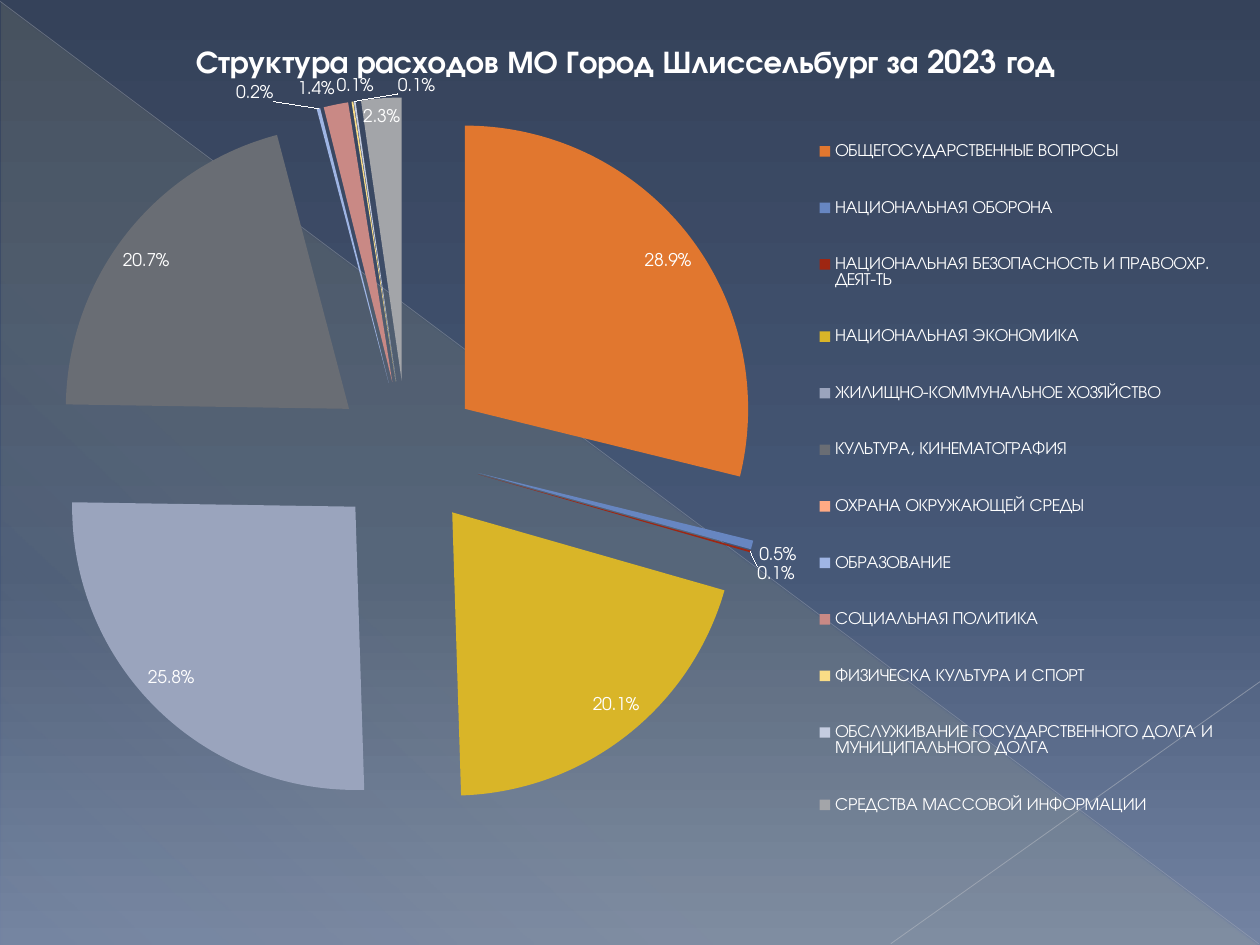
"""Build the slide with the 2023 municipal spending pie chart."""
from lxml.etree import SubElement
from pptx import Presentation
from pptx.chart.data import CategoryChartData
from pptx.dml.color import RGBColor
from pptx.enum.chart import XL_CHART_TYPE as ChartType, XL_LABEL_POSITION as LabelPosition
from pptx.enum.chart import XL_LEGEND_POSITION as LegendPosition
from pptx.enum.shapes import MSO_CONNECTOR as Connector, MSO_SHAPE as Shape
from pptx.oxml import parse_xml
from pptx.oxml.ns import nsdecls, qn
from pptx.util import Inches, Pt

COLORS = {"white": "FFFFFF", "night": "35425A", "slate": "465877", "haze": "7383A2",
          "glow": "FFF39D", "long_line": "BABDC4", "short_line": "C1C4CA"}
FONT = "TeX Gyre Adventor"
SPENDING = [
    ("ОБЩЕГОСУДАРСТВЕННЫЕ ВОПРОСЫ", 0.289, "E1772F"),
    ("НАЦИОНАЛЬНАЯ ОБОРОНА", 0.005, "6786C1"),
    ("НАЦИОНАЛЬНАЯ БЕЗОПАСНОСТЬ И ПРАВООХР. ДЕЯТ-ТЬ", 0.001, "9E2612"),
    ("НАЦИОНАЛЬНАЯ ЭКОНОМИКА", 0.201, "D9B528"),
    ("ЖИЛИЩНО-КОММУНАЛЬНОЕ ХОЗЯЙСТВО", 0.258, "9AA4BD"),
    ("КУЛЬТУРА, КИНЕМАТОГРАФИЯ", 0.207, "696D74"),
    ("ОХРАНА ОКРУЖАЮЩЕЙ СРЕДЫ", 0, "FFAA84"),
    ("ОБРАЗОВАНИЕ", 0.002, "9FB5E4"),
    ("СОЦИАЛЬНАЯ ПОЛИТИКА", 0.014, "C98985"),
    ("ФИЗИЧЕСКА КУЛЬТУРА И СПОРТ", 0.001, "F9DC86"),
    ("ОБСЛУЖИВАНИЕ ГОСУДАРСТВЕННОГО ДОЛГА И МУНИЦИПАЛЬНОГО ДОЛГА", 0.001, "C4CCE0"),
    ("СРЕДСТВА МАССОВОЙ ИНФОРМАЦИИ", 0.023, "A3A5A9"),
]


def set_gradient(fill, element, stops, angle):
    fill.gradient()
    gradient = next(element.iter(qn("a:gradFill")))
    marks = "".join(
        f'<a:gs pos="{place * 1000}"><a:srgbClr val="{COLORS[name]}">'
        f'<a:alpha val="{alpha * 1000}"/></a:srgbClr></a:gs>'
        for place, name, alpha in stops)
    gradient.replace(gradient.find(qn("a:gsLst")),
                     parse_xml(f'<a:gsLst {nsdecls("a")}>{marks}</a:gsLst>'))
    gradient.find(qn("a:lin")).set("ang", str(angle * 60000))


def set_layout(parent, index, left, top, width, height, target=""):
    for old in parent.findall(qn("c:layout")):
        parent.remove(old)
    parent.insert(index, parse_xml(
        f'<c:layout {nsdecls("c")}><c:manualLayout>{target}'
        '<c:xMode val="edge"/><c:yMode val="edge"/>'
        f'<c:x val="{left}"/><c:y val="{top}"/><c:w val="{width}"/><c:h val="{height}"/>'
        '</c:manualLayout></c:layout>'))


deck = Presentation()
deck.slide_width, deck.slide_height = Inches(10), Inches(7.5)
page = deck.slides.add_slide(deck.slide_layouts[6])
set_gradient(page.background.fill, page.element,
             [(0, "night", 100), (60, "slate", 100), (100, "haze", 100)], 90)

triangle = page.shapes.add_shape(Shape.RIGHT_TRIANGLE, Inches(0.01), Inches(0.02),
                                 Inches(9.98), Inches(7.48))
triangle.shadow.inherit = False
triangle.line.fill.background()
set_gradient(triangle.fill, triangle.element,
             [(0, "glow", 10), (70, "glow", 8), (100, "glow", 1)], 133)

for start_x, start_y, end_x, end_y, name, width, alpha in [
    (0, 0.01, 9.99, 7.49, "long_line", 0.39, 35),
    (10, 5.41, 7.07, 7.49, "short_line", 0.47, 45),
]:
    line = page.shapes.add_connector(Connector.STRAIGHT, Inches(start_x), Inches(start_y),
                                     Inches(end_x), Inches(end_y))
    line.line.width = Pt(width)
    line.line.color.rgb = RGBColor.from_string(COLORS[name])
    color = next(line.element.iter(qn("a:srgbClr")))
    SubElement(color, qn("a:alpha")).set("val", str(alpha * 1000))
    SubElement(line.element.spPr, qn("a:effectLst"))

data = CategoryChartData(number_format="0.0%")
data.categories = [name for name, share, color in SPENDING]
data.add_series("Series 1", [share for name, share, color in SPENDING])
chart = page.shapes.add_chart(ChartType.PIE, Inches(0.12), Inches(0.13),
                              Inches(9.69), Inches(6.85), data).chart
white = RGBColor.from_string(COLORS["white"])
chart.font.name = FONT
chart.font.size = Pt(10)
chart.font.color.rgb = white

chart.has_title = True
title = chart.chart_title.text_frame.paragraphs[0]
title.text = "Структура расходов МО Город Шлиссельбург за 2023 год"
title.font.name = FONT
title.font.size = Pt(18)
title.font.bold = True
title.font.color.rgb = white

chart.has_legend = True
chart.legend.position = LegendPosition.RIGHT
chart.legend.include_in_layout = False
set_layout(next(chart.element.iter(qn("c:legend"))), 1, 0.65, 0.1, 0.34, 0.87)
set_layout(next(chart.element.iter(qn("c:plotArea"))), 0, 0.028, 0.094, 0.586, 0.827,
           '<c:layoutTarget val="inner"/>')

plot = chart.plots[0]
plot.vary_by_categories = True
series = plot.series[0]
for index, (name, share, color) in enumerate(SPENDING):
    fill = series.points[index].format.fill
    fill.solid()
    fill.fore_color.rgb = RGBColor.from_string(color)
next(chart.element.iter(qn("c:dPt"))).addprevious(
    parse_xml(f'<c:explosion {nsdecls("c")} val="26"/>'))

labels = series.data_labels
labels.show_value = True
labels.number_format = "0.0%"
labels.number_format_is_linked = False
labels.position = LabelPosition.BEST_FIT
next(chart.element.iter(qn("c:dLbls"))).insert(0, parse_xml(
    f'<c:dLbl {nsdecls("c")}><c:idx val="6"/><c:delete val="1"/></c:dLbl>'))

deck.save("out.pptx")
